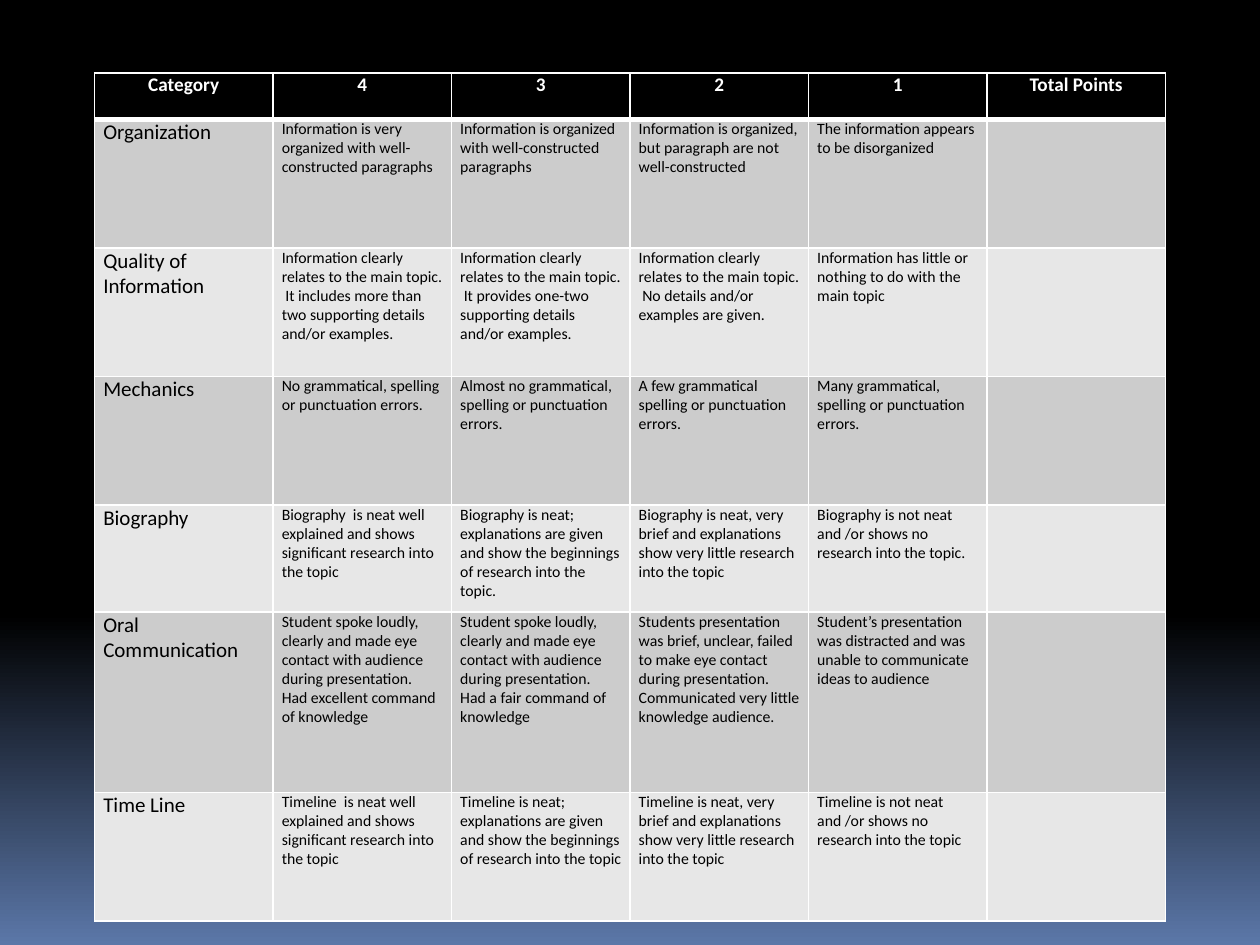
"""Build a slide that holds a grading rubric as a table."""
from copy import deepcopy
from dataclasses import dataclass

from lxml import etree
from pptx import Presentation
from pptx.dml.color import RGBColor
from pptx.enum.text import PP_ALIGN
from pptx.oxml.ns import qn
from pptx.slide import Slide
from pptx.table import _Cell
from pptx.util import Inches, Pt

CENTER, LEFT = PP_ALIGN.CENTER, PP_ALIGN.LEFT


@dataclass(frozen=True)
class Theme:
    font: str = "Calibri"
    black: str = "000000"
    white: str = "FFFFFF"
    blue: str = "5B77A8"
    bands: tuple[str, str] = ("CCCCCC", "E7E7E7")
    head: int = 11
    label: int = 12
    body: int = 9
    thin: int = 1
    thick: int = 3


@dataclass(frozen=True)
class Row:
    label: str
    marks: tuple[str, ...]
    height: float = 1.02


@dataclass(frozen=True)
class Style:
    size: int
    color: str
    fill: str
    bold: bool = False
    align: PP_ALIGN = LEFT
    top: int = 1
    bottom: int = 1


THEME = Theme()
HEAD = Row("Category", ("4", "3", "2", "1", "Total Points"), 0.37)
ROWS = (
    Row("Organization", (
        "Information is very organized with well-constructed paragraphs",
        "Information is organized with well-constructed paragraphs",
        "Information is organized, but paragraph are not well-constructed",
        "The information appears to be disorganized", "")),
    Row("Quality of Information", (
        "Information clearly relates to the main topic.  It includes more than two "
        "supporting details and/or examples.",
        "Information clearly relates to the main topic.  It provides one-two "
        "supporting details and/or examples.",
        "Information clearly relates to the main topic.  No details and/or "
        "examples are given.",
        "Information has little or nothing to do with the main topic", "")),
    Row("Mechanics", (
        "No grammatical, spelling or punctuation errors.",
        "Almost no grammatical, spelling or punctuation errors.",
        "A few grammatical spelling or punctuation errors.",
        "Many grammatical, spelling or punctuation errors.", "")),
    Row("Biography", (
        "Biography  is neat well explained and shows significant research into the topic",
        "Biography is neat; explanations are given and show the beginnings of "
        "research into the topic.",
        "Biography is neat, very brief and explanations show very little research "
        "into the topic",
        "Biography is not neat and /or shows no research into the topic.", ""), 0.85),
    Row("Oral Communication", (
        "Student spoke loudly, clearly and made eye contact with audience during "
        "presentation.  Had excellent command of knowledge",
        "Student spoke loudly, clearly and made eye contact with audience during "
        "presentation.  Had a fair command of knowledge",
        "Students presentation was brief, unclear, failed to make eye contact during "
        "presentation. Communicated very little knowledge audience.",
        "Student’s presentation was distracted and was unable to communicate ideas "
        "to audience", ""), 1.43),
    Row("Time Line", (
        "Timeline  is neat well explained and shows significant research into the topic",
        "Timeline is neat; explanations are given and show the beginnings of "
        "research into the topic",
        "Timeline is neat, very brief and explanations show very little research "
        "into the topic",
        "Timeline is not neat and /or shows no research into the topic", "")),
)


def paint_back(slide: Slide) -> None:
    fill = slide.background.fill
    fill.gradient()
    fill.gradient_angle = 270
    for stop, color in zip(fill.gradient_stops, (THEME.black, THEME.blue)):
        stop.color.rgb = RGBColor.from_string(color)
    stops = slide.element.find(f".//{qn('a:gsLst')}")
    middle = deepcopy(stops[0])
    middle.set("pos", "65000")
    stops.insert(1, middle)


def add_edge(cell: _Cell, side: str, width: int) -> None:
    props = cell._tc.get_or_add_tcPr()
    line = etree.SubElement(props, qn(f"a:ln{side}"), w=str(Pt(width)))
    solid = etree.SubElement(line, qn("a:solidFill"))
    etree.SubElement(solid, qn("a:srgbClr"), val=THEME.white)


def fill_cell(cell: _Cell, text: str, style: Style) -> None:
    edges = {"L": THEME.thin, "R": THEME.thin, "T": style.top, "B": style.bottom}
    for side, width in edges.items():
        add_edge(cell, side, width)
    cell.fill.solid()
    cell.fill.fore_color.rgb = RGBColor.from_string(style.fill)
    cell.margin_left = cell.margin_right = Inches(0.07)
    cell.margin_top = cell.margin_bottom = 0
    cell.text = text
    para = cell.text_frame.paragraphs[0]
    para.alignment = style.align
    para.font.name = THEME.font
    para.font.size = Pt(style.size)
    para.font.bold = style.bold
    para.font.color.rgb = RGBColor.from_string(style.color)


def pick_style(row: int, col: int) -> Style:
    if row == 0:
        return Style(THEME.head, THEME.white, THEME.black, True, CENTER,
                     bottom=THEME.thick)
    size = THEME.label if col == 0 else THEME.body
    top = THEME.thick if row == 1 else THEME.thin
    return Style(size, THEME.black, THEME.bands[(row - 1) % 2], top=top)


def add_rubric(slide: Slide, rows: tuple[Row, ...]) -> None:
    count = len(rows[0].marks) + 1
    height = sum(row.height for row in rows)
    table = slide.shapes.add_table(len(rows), count, Inches(0.75), Inches(0.58),
                                   Inches(8.5), Inches(height)).table
    for r, row in enumerate(rows):
        table.rows[r].height = Inches(row.height)
        for c, text in enumerate((row.label, *row.marks)):
            fill_cell(table.cell(r, c), text, pick_style(r, c))


def main() -> None:
    deck = Presentation()
    deck.slide_width, deck.slide_height = Inches(10), Inches(7.5)
    slide = deck.slides.add_slide(deck.slide_layouts[6])
    paint_back(slide)
    add_rubric(slide, (HEAD, *ROWS))
    deck.save("out.pptx")


if __name__ == "__main__":
    main()
